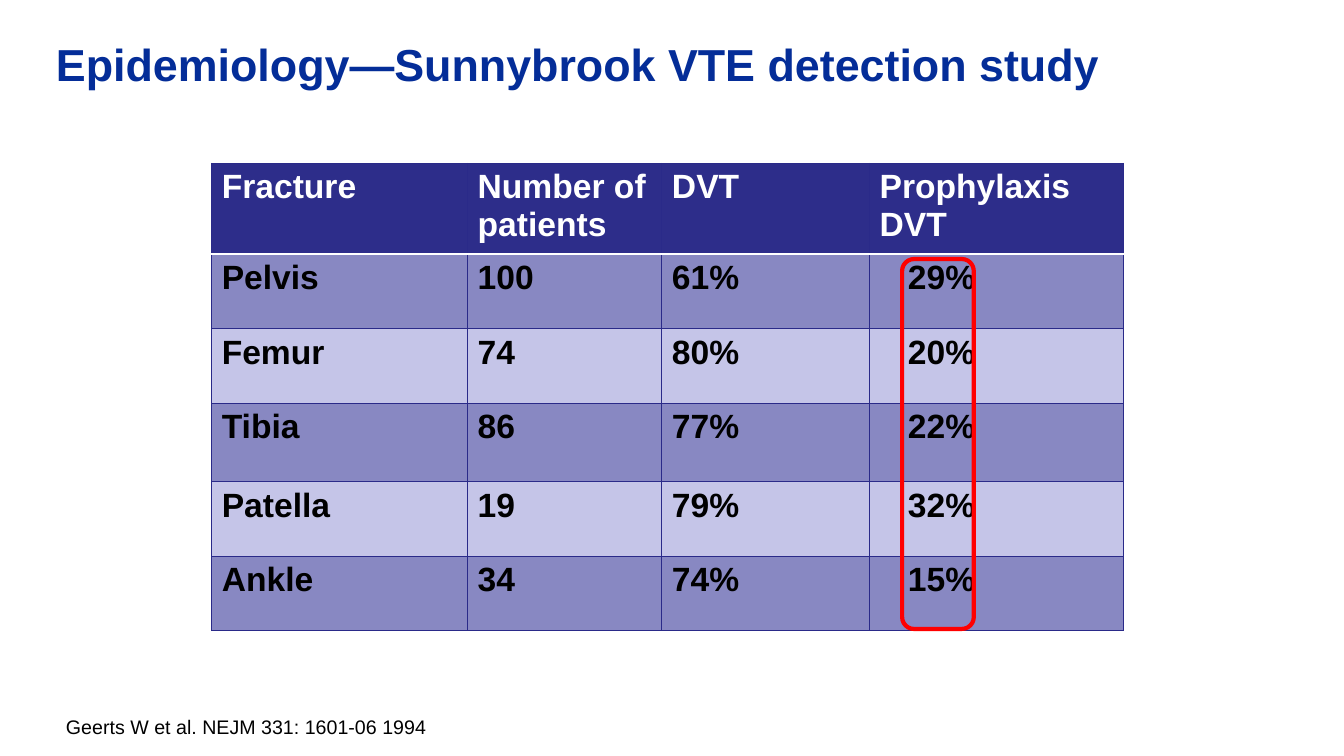
from pptx import Presentation
from pptx import util as u
from pptx.dml.color import RGBColor
from pptx.enum import shapes, text
from pptx.oxml.ns import qn
from lxml import etree

COLUMNS, ROWS = 24, 15
HEADER = ["Fracture", "Number of patients", "DVT", "Prophylaxis DVT"]
FRACTURES = [
    ["Pelvis", "100", "61%", "29%"],
    ["Femur", "74", "80%", "20%"],
    ["Tibia", "86", "77%", "22%"],
    ["Patella", "19", "79%", "32%"],
    ["Ankle", "34", "74%", "15%"],
]
COLUMN_WIDTHS = [4.57, 3.47, 3.71, 4.54]
ROW_HEIGHTS = [1.48, 1.48, 1.48, 1.56, 1.48, 1.48]


def rgb(value):
    return RGBColor.from_string(value)


class SlideBuilder:
    """Places elements on a grid of 24 columns by 15 rows."""
    font = "Arial"
    navy, title_blue, grid_blue = "2D2D8A", "042D98", "2A2A89"
    bands = ["8888C2", "C5C5E8"]
    white, black, red = "FFFFFF", "000000", "FF0000"

    def __init__(self, prs):
        self.prs = prs
        self.s = prs.slides.add_slide(prs.slide_layouts[6])

    def x(self, columns):
        return round(self.prs.slide_width * columns / COLUMNS)

    def y(self, rows):
        return round(self.prs.slide_height * rows / ROWS)

    def box(self, left, top, width, height):
        return self.x(left), self.y(top), self.x(width), self.y(height)

    def fill_text(self, tf, words, size, color, bold=False):
        tf.word_wrap = True
        p = tf.paragraphs[0]
        r = p.add_run()
        r.text = words
        style = {"name": self.font, "size": u.Pt(size), "bold": bold}
        for key, value in style.items():
            setattr(r.font, key, value)
        r.font.color.rgb = rgb(color)
        return p

    def text(self, area, words, size, color, bold=False, spacing=1.0, **frame):
        tf = self.s.shapes.add_textbox(*self.box(*area)).text_frame
        for key, value in frame.items():
            setattr(tf, key, value)
        self.fill_text(tf, words, size, color, bold).line_spacing = spacing

    def border(self, cell, side, color, points):
        ln = etree.SubElement(cell._tc.get_or_add_tcPr(), qn(f"a:ln{side}"),
                              w=str(u.Pt(points)))
        fill = etree.SubElement(ln, qn("a:solidFill"))
        etree.SubElement(fill, qn("a:srgbClr"), val=color)

    def table(self, left, top, rows, widths, heights):
        area = self.box(left, top, sum(widths), sum(heights))
        table = self.s.shapes.add_table(len(rows), len(widths), *area).table
        for column, width in zip(table.columns, widths):
            column.width = self.x(width)
        for row, height in zip(table.rows, heights):
            row.height = self.y(height)
        for i, row in enumerate(rows):
            for j, words in enumerate(row):
                cell = table.cell(i, j)
                edges = {side: (self.grid_blue, 0.75) for side in "LRTB"}
                if i < 2:
                    edges["T" if i else "B"] = (self.white, 2)
                for side, edge in edges.items():
                    self.border(cell, side, *edge)
                cell.fill.solid()
                fill = self.bands[(i - 1) % 2] if i else self.navy
                cell.fill.fore_color.rgb = rgb(fill)
                if i and j == len(row) - 1:
                    cell.margin_left = u.Inches(0.38)
                color = self.black if i else self.white
                self.fill_text(cell.text_frame, words, 24, color, bold=True)

    def outline(self, area, color, points):
        sp = self.s.shapes.add_shape(shapes.MSO_SHAPE.ROUNDED_RECTANGLE,
                                     *self.box(*area))
        sp.shadow.inherit = False
        sp.fill.background()
        sp.line.color.rgb = rgb(color)
        sp.line.width = u.Pt(points)


def main():
    prs = Presentation()
    prs.slide_width, prs.slide_height = u.Inches(13.33), u.Inches(7.5)
    slide = SlideBuilder(prs)
    slide.text((1, 0.84, 21.73, 2), "Epidemiology—Sunnybrook VTE detection study",
               32, slide.title_blue, bold=True, spacing=0.9,
               margin_left=0, margin_top=0, margin_right=0, margin_bottom=0)
    slide.table(3.78, 3.24, [HEADER] + FRACTURES, COLUMN_WIDTHS, ROW_HEIGHTS)
    slide.outline((16.11, 5.14, 1.28, 7.34), slide.red, 3)
    slide.text((1, 14.08, 7.51, 0.68), "Geerts W et al. NEJM 331: 1601-06 1994",
               14, slide.black, auto_size=text.MSO_AUTO_SIZE.SHAPE_TO_FIT_TEXT)
    prs.save("out.pptx")


if __name__ == "__main__":
    main()
